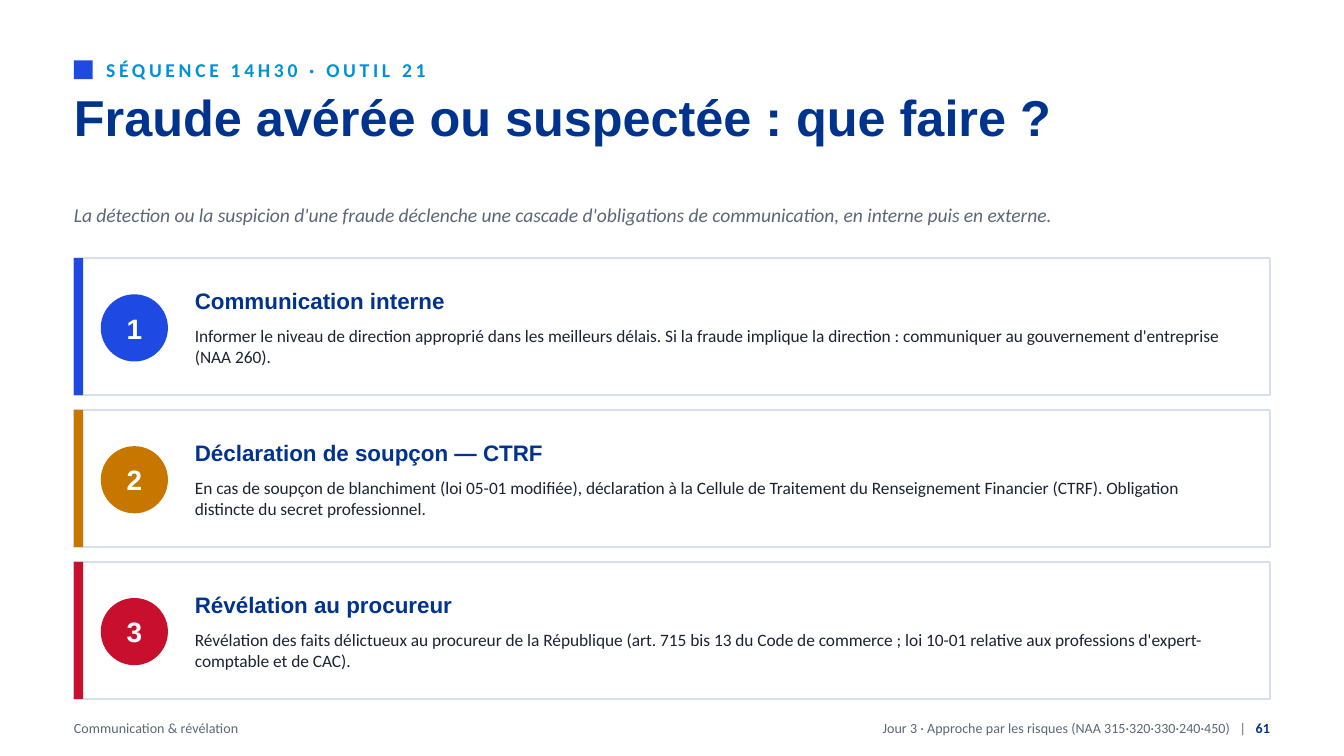
from pptx import Presentation
from pptx.dml.color import RGBColor
from pptx.enum.shapes import MSO_SHAPE
from pptx.enum.text import MSO_ANCHOR, MSO_AUTO_SIZE, PP_ALIGN
from pptx.util import Inches, Pt

RECT, OVAL = MSO_SHAPE.RECTANGLE, MSO_SHAPE.OVAL
TOP, MIDDLE = MSO_ANCHOR.TOP, MSO_ANCHOR.MIDDLE
LEFT, CENTER, RIGHT = PP_ALIGN.LEFT, PP_ALIGN.CENTER, PP_ALIGN.RIGHT
NO_FIT = MSO_AUTO_SIZE.NONE

HEAD, BODY = "Arial", "Calibri"
NAVY, BLUE, CYAN = "00338D", "1E49E2", "0091DA"
AMBER, RED = "C77700", "C8102E"
GREY, INK, BORDER, WHITE = "5C6678", "1B2333", "D7DEEC", "FFFFFF"

MARGIN, WIDTH = 0.55, 8.9
CARD_TOP, CARD_HEIGHT, CARD_STEP = 1.92, 1.02, 1.13

STEPS = [
    (BLUE, "Communication interne",
     "Informer le niveau de direction approprié dans les meilleurs délais. "
     "Si la fraude implique la direction : communiquer au gouvernement "
     "d'entreprise (NAA 260)."),
    (AMBER, "Déclaration de soupçon — CTRF",
     "En cas de soupçon de blanchiment (loi 05-01 modifiée), déclaration à la "
     "Cellule de Traitement du Renseignement Financier (CTRF). Obligation "
     "distincte du secret professionnel."),
    (RED, "Révélation au procureur",
     "Révélation des faits délictueux au procureur de la République "
     "(art. 715 bis 13 du Code de commerce ; loi 10-01 relative aux "
     "professions d'expert-comptable et de CAC)."),
]


def rgb(value):
    """Return the colour for a hex string."""
    return RGBColor.from_string(value)


def style_run(r, size, color, font=BODY, bold=False, italic=False, spacing=0):
    """Format a run; letter spacing is in points."""
    r.font.size, r.font.name = Pt(size), font
    r.font.bold, r.font.italic = bold, italic
    r.font.color.rgb = rgb(color)
    if spacing:
        r.font._element.set("spc", str(round(spacing * 100)))


def write(sp, text, size, color, anchor=MIDDLE, align=LEFT, **style):
    """Fill a shape with one paragraph and return that paragraph."""
    tf = sp.text_frame
    tf.text = text
    tf.word_wrap, tf.auto_size, tf.vertical_anchor = True, NO_FIT, anchor
    tf.margin_left = tf.margin_right = tf.margin_top = tf.margin_bottom = 0
    p = tf.paragraphs[0]
    p.alignment = align
    style_run(p.runs[0], size, color, **style)
    return p


def add_text(s, x, y, w, h, text, size, color, **style):
    """Add a text box without margins and return its paragraph."""
    sp = s.shapes.add_textbox(Inches(x), Inches(y), Inches(w), Inches(h))
    return write(sp, text, size, color, **style)


def add_shape(s, kind, x, y, w, h, fill, line=None):
    """Add a flat filled shape with an optional outline."""
    sp = s.shapes.add_shape(kind, Inches(x), Inches(y), Inches(w), Inches(h))
    sp.shadow.inherit = False
    sp.fill.solid()
    sp.fill.fore_color.rgb = rgb(fill)
    if line:
        sp.line.color.rgb = rgb(line)
        sp.line.width = Pt(1)
    else:
        sp.line.fill.background()
    return sp


def add_header(s):
    """Add the marker, section label, title and introduction."""
    title = s.shapes.title
    title.left, title.top = Inches(MARGIN), Inches(0.66)
    title.width, title.height = Inches(WIDTH), Inches(0.62)
    p = write(title, "Fraude avérée ou suspectée : que faire ?", 27, NAVY,
              anchor=TOP, font=HEAD, bold=True)
    p.line_spacing = 0.98
    p.space_before = Pt(0)
    add_shape(s, RECT, MARGIN, 0.45, 0.14, 0.14, BLUE)
    add_text(s, 0.79, 0.4, 8.66, 0.24, "SÉQUENCE 14H30 · OUTIL 21",
             10.5, CYAN, bold=True, spacing=2)
    add_text(s, MARGIN, 1.4, WIDTH, 0.4,
             "La détection ou la suspicion d'une fraude déclenche une cascade "
             "d'obligations de communication, en interne puis en externe.",
             10.5, GREY, italic=True)


def add_card(s, y, number, color, heading, detail):
    """Add one numbered step card."""
    add_shape(s, RECT, MARGIN, y, WIDTH, CARD_HEIGHT, WHITE, BORDER)
    add_shape(s, RECT, MARGIN, y, 0.07, CARD_HEIGHT, color)
    badge = add_shape(s, OVAL, 0.75, y + 0.27, 0.5, 0.5, color)
    write(badge, str(number), 15, WHITE, align=CENTER, font=HEAD, bold=True)
    add_text(s, 1.45, y + 0.14, 7.8, 0.36, heading, 12, NAVY,
             font=HEAD, bold=True)
    add_text(s, 1.45, y + 0.5, 7.75, 0.48, detail, 9.3, INK, anchor=TOP)


def add_footer(s):
    """Add the topic on the left, the course and page number on the right."""
    add_text(s, MARGIN, 5.3, 5.5, 0.24, "Communication & révélation", 7.5, GREY)
    p = add_text(s, 4, 5.3, 5.45, 0.24,
                 "Jour 3 · Approche par les risques (NAA 315·320·330·240·450)",
                 7.5, GREY, align=RIGHT)
    for text, color, bold, spacing in ((" |", GREY, False, 3.4),
                                       (" 61", NAVY, True, 0)):
        r = p.add_run()
        r.text = text
        style_run(r, 7.5, color, bold=bold, spacing=spacing)


def main():
    """Build and save the slide."""
    prs = Presentation()
    prs.slide_width, prs.slide_height = Inches(10), Inches(10 * 9 / 16)
    s = prs.slides.add_slide(prs.slide_layouts[5])
    add_header(s)
    for i, step in enumerate(STEPS):
        add_card(s, CARD_TOP + i * CARD_STEP, i + 1, *step)
    add_footer(s)
    prs.save("out.pptx")


if __name__ == "__main__":
    main()
